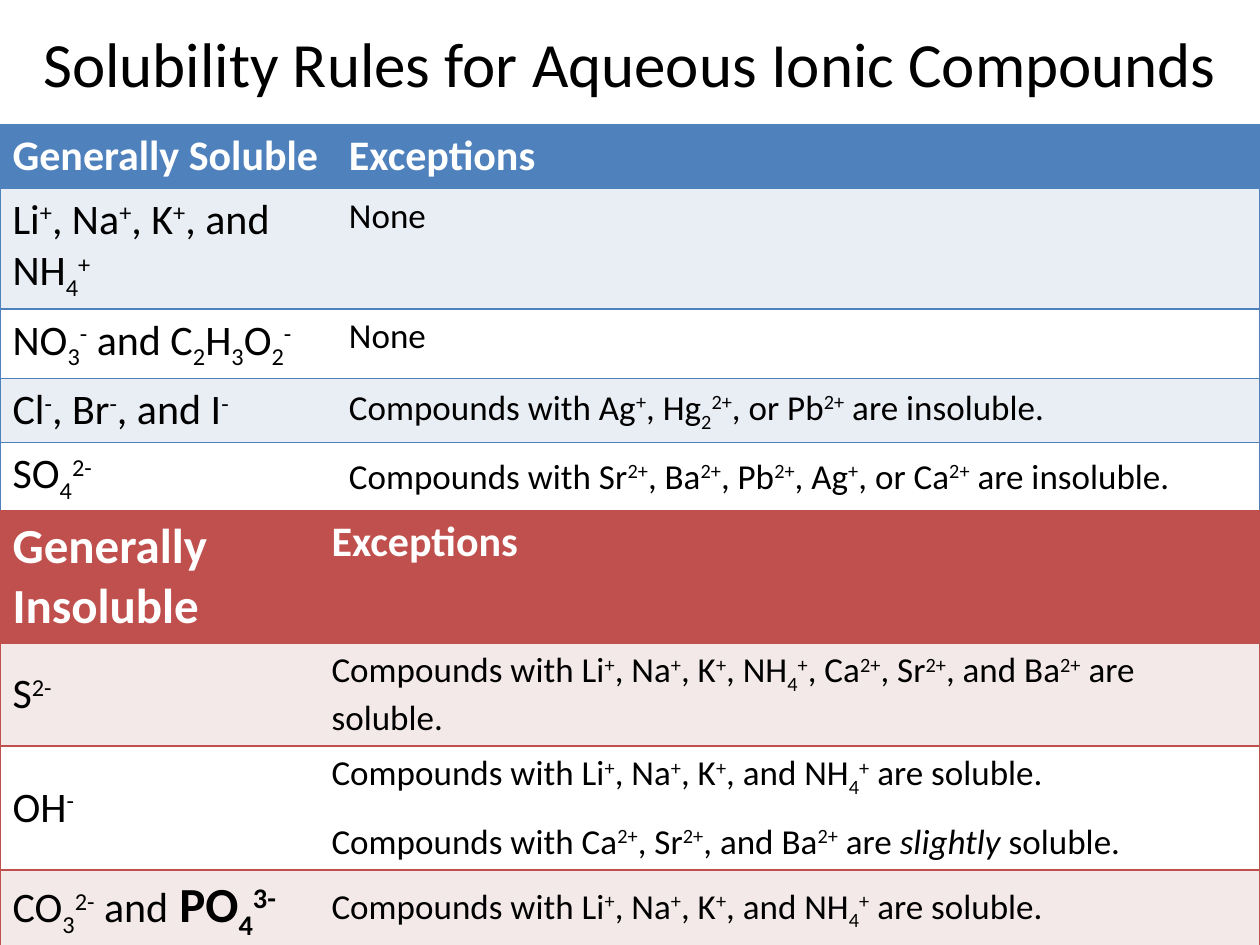
from dataclasses import dataclass

from lxml.etree import SubElement as Sub, Element
from pptx import Presentation
from pptx.dml.color import RGBColor as Rgb
from pptx.enum.text import MSO_ANCHOR as Anchor, PP_ALIGN as Align
from pptx.oxml.ns import qn
from pptx.util import Cm, Pt


@dataclass(frozen=True)
class Theme:
    font: str = "Calibri"
    ink: str = "000000"
    paper: str = "FFFFFF"
    blue: str = "4F81BD"
    sky: str = "E9EDF4"
    red: str = "C0504D"
    rose: str = "F4E9E9"
    title: int = 36
    large: int = 28
    ion: int = 24
    note: int = 20
    edge: int = 1


T = Theme()
ROW = 1.04  # least row height in cm; rows grow with their text

# Runs are parted by "|"; leading marks give the format:
# ^ superscript, _ subscript, / italic, ! large and bold
MARKS = {"/": {"italic": True}, "!": {"bold": True, "size": Pt(T.large)}}
BASE = {"^": "30000", "_": "-25000"}

ALKALI = "Compounds with Li|^+|, Na|^+|, K|^+|, and NH|_4|^+| are soluble."

# Each body row: ion, exception paragraphs, exception anchor
SOLUBLE = [
    ("Li|^+|, Na|^+|, K|^+|, and NH|_4|^+", ["None"], Anchor.TOP),
    ("NO|_3|^-| and C|_2|H|_3|O|_2|^-", ["None"], Anchor.TOP),
    ("Cl|^-|, Br|^-|, and I|^-",
     ["Compounds with Ag|^+|, Hg|_2|^2+|, or Pb|^2+| are insoluble."],
     Anchor.MIDDLE),
    ("SO|_4|^2-",
     ["Compounds with Sr|^2+|, Ba|^2+|, Pb|^2+|, Ag|^+|, or Ca|^2+"
      "| are insoluble."], Anchor.MIDDLE),
]
INSOLUBLE = [
    ("S|^2-",
     ["Compounds with Li|^+|, Na|^+|, K|^+|, NH|_4|^+|, Ca|^2+|, Sr|^2+"
      "|, and Ba|^2+| are soluble."], Anchor.MIDDLE),
    ("OH|^-",
     [ALKALI, "Compounds with Ca|^2+|, Sr|^2+|, and Ba|^2+| are |/slightly"
      "| soluble."], Anchor.MIDDLE),
    ("CO|_3|^2-| and|! PO|!_4|!^3-", [ALKALI], Anchor.MIDDLE),
]


def style(font, color, **form):
    """Set the font attributes and the colour."""
    for name, value in {"name": T.font, **form}.items():
        setattr(font, name, value)
    font.color.rgb = Rgb.from_string(color)


def write(para, text, size, color, bold=False):
    """Write marked text as formatted runs."""
    for part in text.split("|"):
        form, base = {"size": Pt(size), "bold": bold}, None
        while part[0] in "^_/!":
            form.update(MARKS.get(part[0], {}))
            base = BASE.get(part[0], base)
            part = part[1:]
        run = para.add_run()
        run.text = part
        style(run.font, color, **form)
        if base:
            run._r.get_or_add_rPr().set("baseline", base)


def edge(cell, color, outer):
    """Draw top, bottom and the outer side; hide the inner side."""
    props = cell._tc.get_or_add_tcPr()
    for place, side in enumerate("LRTB"):
        line = Element(qn(f"a:ln{side}"), w=str(Pt(T.edge)))
        if side in outer + "TB":
            fill = Sub(line, qn("a:solidFill"))
            Sub(fill, qn("a:srgbClr"), val=color)
        else:
            Sub(line, qn("a:noFill"))
        props.insert(place, line)


def fill_cell(cell, paras, size, ink, fill, anchor, bold=False):
    cell.fill.solid()
    cell.fill.fore_color.rgb = Rgb.from_string(fill)
    cell.vertical_anchor = anchor
    frame = cell.text_frame
    for num, text in enumerate(paras):
        para = frame.add_paragraph() if num else frame.paragraphs[0]
        if num < len(paras) - 1:
            para.space_after = Pt(12)
        write(para, text, size, ink, bold)


def add_title(slide, box, text):
    title = slide.shapes.title
    for name, value in zip(("left", "top", "width", "height"), box):
        setattr(title, name, Cm(value))
    frame = title.text_frame
    frame.vertical_anchor = Anchor.MIDDLE
    para = frame.paragraphs[0]
    para.alignment = Align.CENTER
    write(para, text, T.title, T.ink)


def add_rules(slide, box, split, head, size, rows, main, tint):
    """Place one table of rules; split is the first column's width."""
    left, top, width, height = box
    shape = slide.shapes.add_table(len(rows) + 1, 2, *map(Cm, box))
    table = shape.table
    for name in ("first_row", "horz_banding"):
        setattr(table, name, False)
    for col, wide in zip(table.columns, (split, width - split)):
        col.width = Cm(wide)
    for row in table.rows:
        row.height = Cm(ROW)
    shape.height = Cm(height)

    # Header
    for col, (text, pts) in enumerate(((head, size), ("Exceptions", T.ion))):
        fill_cell(table.cell(0, col), [text], pts, T.paper, main,
                  Anchor.TOP, True)

    # Banded body
    for num, (ion, notes, anchor) in enumerate(rows, 1):
        fill = tint if num % 2 else T.paper
        fill_cell(table.cell(num, 0), [ion], T.ion, T.ink, fill,
                  Anchor.MIDDLE)
        fill_cell(table.cell(num, 1), notes, T.note, T.ink, fill, anchor)

    # Borders
    for num in range(len(rows) + 1):
        for col, outer in enumerate("LR"):
            edge(table.cell(num, col), main, outer)


def main():
    deck = Presentation()
    deck.slide_width, deck.slide_height = Cm(25.4), Cm(19.05)
    slide = deck.slides.add_slide(deck.slide_layouts[5])
    add_title(slide, (0, 0, 25.4, 2.51),
              "Solubility Rules for Aqueous Ionic Compounds")
    add_rules(slide, (0, 2.51, 25.4, 7.37), 6.78, "Generally Soluble",
              T.ion, SOLUBLE, T.blue, T.sky)
    add_rules(slide, (0, 10.29, 25.4, 8.38), 6.43, "Generally Insoluble",
              T.large, INSOLUBLE, T.red, T.rose)
    deck.save("out.pptx")


if __name__ == "__main__":
    main()
